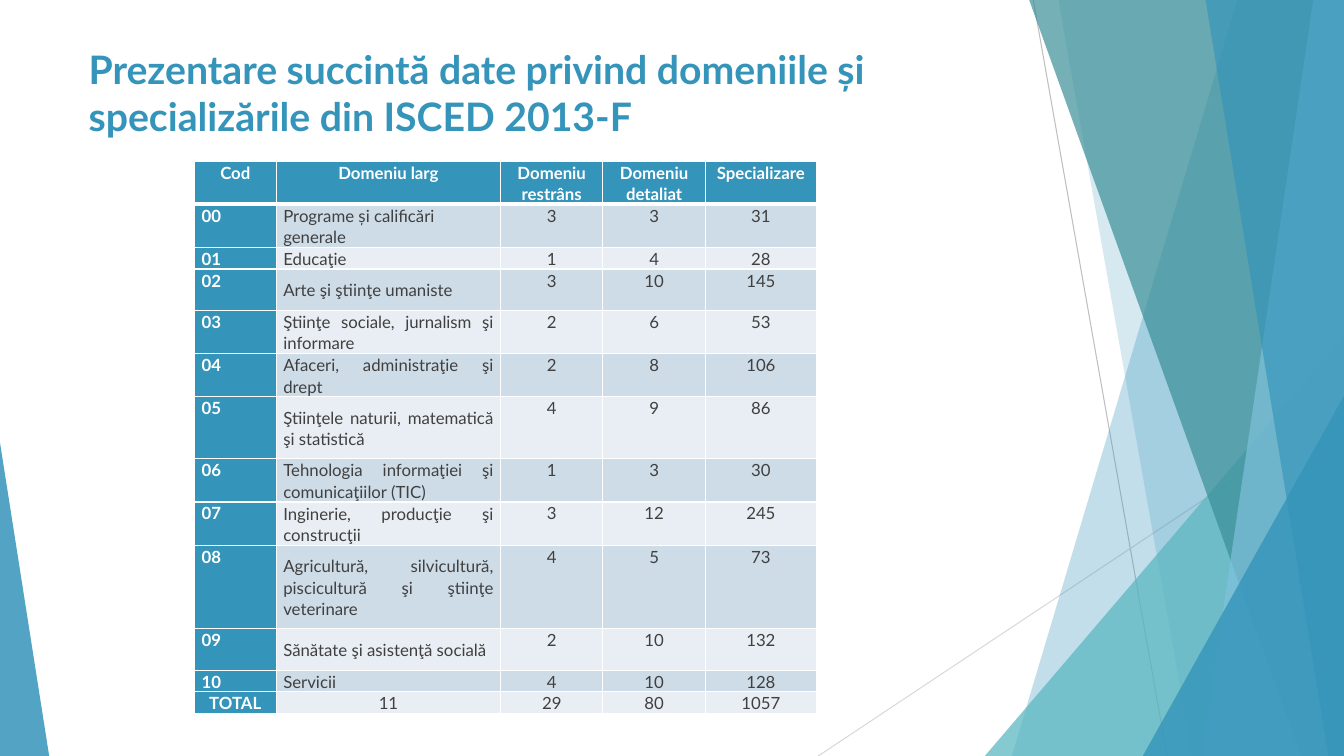
from lxml.etree import SubElement
from pptx import Presentation
from pptx.dml.color import RGBColor
from pptx.enum.shapes import MSO_CONNECTOR, MSO_SHAPE
from pptx.enum.text import MSO_ANCHOR, MSO_AUTO_SIZE, PP_ALIGN
from pptx.oxml.ns import qn
from pptx.util import Cm, Pt

WIDE, HIGH = 33.87, 19.05
COLORS = {
    "blue": "3494BA", "aqua": "58B6C0", "teal": "3A8F98", "sky": "7FC1DB",
    "white": "FFFFFF", "dark": "404040", "band": "CEDCE7", "pale": "E8EEF3",
    "grey": "BFBFBF", "mist": "D9D9D9",
}
LEFT, MID, JUST = PP_ALIGN.LEFT, PP_ALIGN.CENTER, PP_ALIGN.JUSTIFY

TITLE = "Prezentare succintă date privind domeniile și specializările din ISCED 2013-F"
ROWS = [
    ("Cod", "Domeniu larg", "Domeniu restrâns", "Domeniu detaliat", "Specializare"),
    ("00", "Programe și calificări generale", 3, 3, 31),
    ("01", "Educaţie", 1, 4, 28),
    ("02", "Arte şi ştiinţe umaniste", 3, 10, 145),
    ("03", "Ştiinţe sociale, jurnalism şi informare", 2, 6, 53),
    ("04", "Afaceri, administraţie şi drept", 2, 8, 106),
    ("05", "Ştiinţele naturii, matematică şi statistică", 4, 9, 86),
    ("06", "Tehnologia informaţiei şi comunicaţiilor (TIC)", 1, 3, 30),
    ("07", "Inginerie, producţie şi construcţii", 3, 12, 245),
    ("08", "Agricultură, silvicultură, piscicultură şi ştiinţe veterinare", 4, 5, 73),
    ("09", "Sănătate şi asistenţă socială", 2, 10, 132),
    ("10", "Servicii", 4, 10, 128),
    ("TOTAL", 11, 29, 80, 1057),
]
WIDTHS = [2.06, 5.66, 2.57, 2.59, 2.79]
ONE, TWO, THREE, FOUR = 0.51, 1.04, 1.57, 2.11
HEIGHTS = [TWO, TWO, ONE, TWO, TWO, TWO, THREE, TWO, TWO, FOUR, TWO, ONE, ONE]


def rgb(name):
    return RGBColor.from_string(COLORS[name])


def write(frame, text, size=12, color="dark", bold=False, align=LEFT, line=1, gap=0):
    para = frame.paragraphs[0]
    para.alignment, para.line_spacing = align, line
    para.space_before = para.space_after = Pt(gap)
    run = para.add_run()
    run.text = str(text)
    font = run.font
    font.name, font.size, font.bold = "Lato", Pt(size), bold
    font.color.rgb = rgb(color)


class Deck:
    def __init__(self):
        self.prs = Presentation()
        self.prs.slide_width, self.prs.slide_height = Cm(WIDE), Cm(HIGH)
        self.slide = self.prs.slides.add_slide(self.prs.slide_layouts[5])
        self.shapes = self.slide.shapes

    def paint(self, shape, color, alpha):
        shape.shadow.inherit = False
        shape.fill.solid()
        shape.fill.fore_color.rgb = rgb(color)
        tone = shape._element.spPr.find(".//" + qn("a:srgbClr"))
        SubElement(tone, qn("a:alpha"), val=str(alpha * 1000))
        shape.line.fill.background()

    def line(self, start, end, color):
        link = self.shapes.add_connector(
            MSO_CONNECTOR.STRAIGHT, *[Cm(v) for v in start + end])
        link.line.color.rgb = rgb(color)
        link.line.width = Pt(0.75)
        SubElement(link._element.spPr, qn("a:effectLst"))

    def panel(self, top, base, color, alpha):
        """Full-height panel with a slanted left edge, up to the right side."""
        edge = [(WIDE, -0.02), (WIDE, HIGH), (base, HIGH)]
        pen = self.shapes.build_freeform(Cm(top), Cm(-0.02))
        pen.add_line_segments([(Cm(x), Cm(y)) for x, y in edge], close=True)
        self.paint(pen.convert_to_shape(), color, alpha)

    def wedge(self, left, top, width, tip, color, alpha):
        """Triangle that stands on the bottom of the slide."""
        shape = self.shapes.add_shape(
            MSO_SHAPE.ISOSCELES_TRIANGLE, Cm(left), Cm(top), Cm(width), Cm(HIGH - top))
        shape.adjustments[0] = tip
        self.paint(shape, color, alpha)

    def title(self, text, left, top, width, height):
        box = self.shapes.title
        box.left, box.top, box.width, box.height = map(Cm, (left, top, width, height))
        frame = box.text_frame
        frame.word_wrap, frame.auto_size = True, MSO_AUTO_SIZE.NONE
        frame.vertical_anchor = MSO_ANCHOR.TOP
        write(frame, text, size=28, color="blue", bold=True)
        self.shapes._spTree.append(box._element)  # in front of the panels

    def border(self, cell, row):
        props = cell._tc.get_or_add_tcPr()
        for side in "LRTB":
            thick = (side, row) in (("B", 0), ("T", 1))
            edge = SubElement(props, qn("a:ln" + side), w=str(Pt(3 if thick else 1)))
            fill = SubElement(edge, qn("a:solidFill"))
            SubElement(fill, qn("a:srgbClr"), val=COLORS["white"])

    def cell(self, cell, text, row, col):
        head = row == 0 or col == 0
        label = col == 1 and isinstance(text, str) and row > 0
        if label:
            align = LEFT if row == 1 else JUST
        else:
            align = LEFT if col == 0 and text.isdigit() else MID
        cell.margin_left = cell.margin_right = Cm(0.18)
        cell.margin_top = cell.margin_bottom = 0
        cell.vertical_anchor = MSO_ANCHOR.MIDDLE if label else MSO_ANCHOR.TOP
        self.border(cell, row)
        cell.fill.solid()
        cell.fill.fore_color.rgb = rgb("blue" if head else "band" if row % 2 else "pale")
        write(cell.text_frame, text, color="white" if head else "dark",
              bold=head, align=align, line=1.07, gap=6)

    def table(self, rows, left, top, widths, heights):
        grid = self.shapes.add_table(
            len(rows), len(widths), Cm(left), Cm(top),
            Cm(sum(widths)), Cm(sum(heights))).table
        for col, width in zip(grid.columns, widths):
            col.width = Cm(width)
        for row, height in zip(grid.rows, heights):
            row.height = Cm(height)
        for r, row in enumerate(rows):
            for c, text in enumerate(row):
                self.cell(grid.cell(r, c), text, r, c)


def main():
    deck = Deck()

    # Background lines and translucent panels
    deck.line((26.04, 0), (29.41, HIGH), "grey")
    deck.line((WIDE, 10.24), (20.62, HIGH), "mist")
    deck.panel(31.19, 25.5, "blue", 30)
    deck.panel(26.67, 30.05, "blue", 20)
    deck.wedge(24.82, 8.46, 9.05, 1, "aqua", 72)
    deck.panel(25.93, 32.79, "teal", 70)
    deck.panel(33.1, 30.28, "sky", 70)
    deck.panel(30.38, 33.48, "blue", 65)
    deck.wedge(28.8, 9.98, 5.07, 1, "blue", 80)
    deck.wedge(0, 11.15, 1.24, 0, "blue", 85)

    # Title and table of fields
    deck.title(TITLE, 1.98, 1.02, 24, 2.64)
    deck.table(ROWS, 4.9, 4.06, WIDTHS, HEIGHTS)

    deck.prs.save("out.pptx")


if __name__ == "__main__":
    main()
